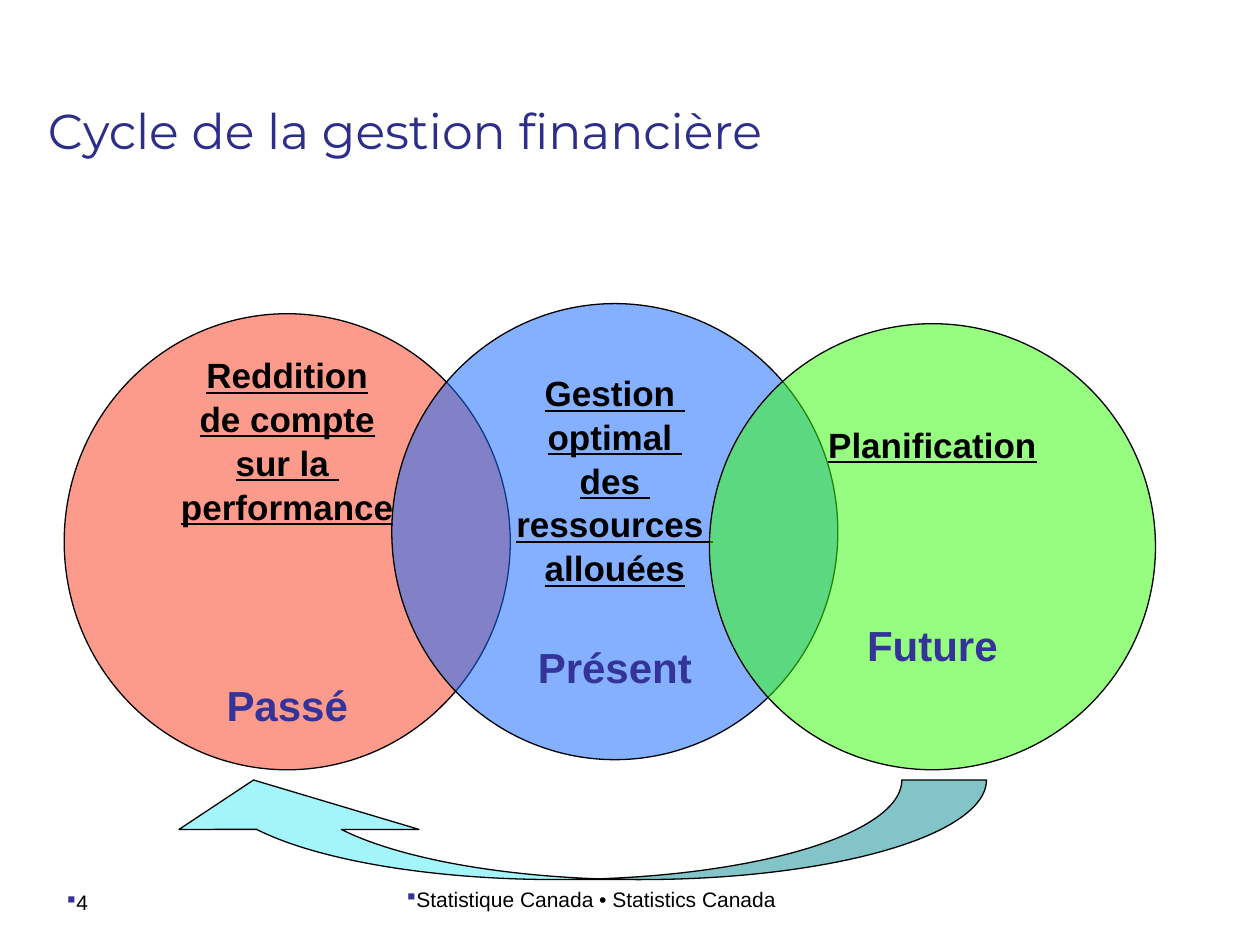
from lxml import etree
from pptx import Presentation
from pptx.dml.color import RGBColor
from pptx.enum import shapes, text
from pptx.oxml import ns
from pptx.util import Pt

BLACK = RGBColor(0x00, 0x00, 0x00)
NAVY = RGBColor(0x2D, 0x2D, 0x8A)
INDIGO = RGBColor(0x33, 0x33, 0x99)
RED = RGBColor(0xFA, 0x43, 0x24)
BLUE = RGBColor(0x17, 0x6A, 0xFF)
GREEN = RGBColor(0x39, 0xFC, 0x12)
AQUA = RGBColor(0xA3, 0xF5, 0xFB)
CENTER = text.PP_ALIGN.CENTER
CIRCLE_WIDTH = 254.9


def add_line(frame, words, size=20, color=BLACK, font="Arial", align=None,
             bold=False, underline=False, before=0, bullet=False):
    """Write one paragraph, using the frame's first one while it is empty."""
    line = frame.paragraphs[0]
    if line.runs:
        line = frame.add_paragraph()
    if bullet:
        add_square_bullet(line)
    run = line.add_run()
    run.text = words
    for style in (line.font, run.font):
        style.name = font
        style.size = Pt(size)
        style.bold = bold
        style.underline = underline
        style.color.rgb = color
    line.alignment = align
    line.space_before = Pt(before)


def add_square_bullet(line):
    """Give a paragraph a small indigo square bullet."""
    properties = line._p.get_or_add_pPr()
    properties.set("marL", "0")
    properties.set("indent", "0")
    tint = etree.SubElement(properties, ns.qn("a:buClr"))
    etree.SubElement(tint, ns.qn("a:srgbClr"), val=str(INDIGO))
    etree.SubElement(properties, ns.qn("a:buFont"), typeface="Wingdings")
    etree.SubElement(properties, ns.qn("a:buChar"), char="§")


def add_outlined(slide, kind, box, color, alpha=None):
    """Add a filled preset shape with a thin black outline."""
    figure = slide.shapes.add_shape(kind, *map(Pt, box))
    figure.shadow.inherit = False
    figure.fill.solid()
    figure.fill.fore_color.rgb = color
    figure.line.color.rgb = BLACK
    figure.line.width = Pt(0.75)
    if alpha:
        tint = figure._element.spPr.find(ns.qn("a:solidFill"))[0]
        etree.SubElement(tint, ns.qn("a:alpha"), val=str(alpha * 1000))
    return figure


def add_period(slide, left, top, height, color, activity, period, gap):
    """Add a translucent circle naming an activity and its period."""
    circle = add_outlined(slide, shapes.MSO_SHAPE.OVAL,
                          (left, top, CIRCLE_WIDTH, height), color, alpha=53)
    frame = circle.text_frame
    frame.word_wrap = False
    frame.vertical_anchor = text.MSO_ANCHOR.MIDDLE
    for index, words in enumerate(activity):
        add_line(frame, words, align=CENTER, bold=True, underline=True,
                 before=1 if index else 0)
    add_line(frame, period, size=24, color=INDIGO, align=CENTER, bold=True,
             before=gap)


def add_footer(slide, box, words, align=None):
    """Add a bulleted footer text."""
    frame = slide.shapes.add_textbox(*map(Pt, box)).text_frame
    frame.word_wrap = True
    add_line(frame, words, size=12, align=align, bullet=True)


def add_title(slide, box, words):
    """Place and fill the title placeholder."""
    title = slide.shapes.title
    title.left, title.top, title.width, title.height = map(Pt, box)
    title.text_frame.vertical_anchor = text.MSO_ANCHOR.MIDDLE
    add_line(title.text_frame, words, size=28, color=NAVY, font="Montserrat",
             align=text.PP_ALIGN.LEFT)


def add_return_arrow(slide, box):
    """Add the curved arrow leading from the future back to the past."""
    arrow = add_outlined(slide, shapes.MSO_SHAPE.CURVED_DOWN_ARROW, box, AQUA)
    arrow.rotation = 180
    for index, value in enumerate((0.85, 2.41, 0.496)):
        arrow.adjustments[index] = value


def main():
    """Build the financial management cycle slide."""
    deck = Presentation()
    deck.slide_width, deck.slide_height = Pt(720), Pt(540)
    slide = deck.slides.add_slide(deck.slide_layouts[5])
    add_footer(slide, (223.9, 503.3, 228.2, 37.4),
               "Statistique Canada • Statistics Canada", align=CENTER)
    add_footer(slide, (31, 504.7, 119.5, 37.4), "4")
    add_title(slide, (20.2, 37.4, 646.6, 73.4),
              "Cycle de la gestion financière")
    add_period(slide, 36.7, 179.3, 260.6, RED,
               ("Reddition", "de compte", "sur la ", "performance"),
               "Passé", gap=87)
    add_period(slide, 223.9, 173.5, 260.6, BLUE,
               ("Gestion ", "optimal ", "des ", "ressources ", "allouées"),
               "Présent", gap=30)
    add_period(slide, 405.4, 185, 254.9, GREEN, ("Planification",),
               "Future", gap=88)
    add_return_arrow(slide, (76.3, 445.7, 487.4, 56.9))
    deck.save("out.pptx")


if __name__ == "__main__":
    main()
